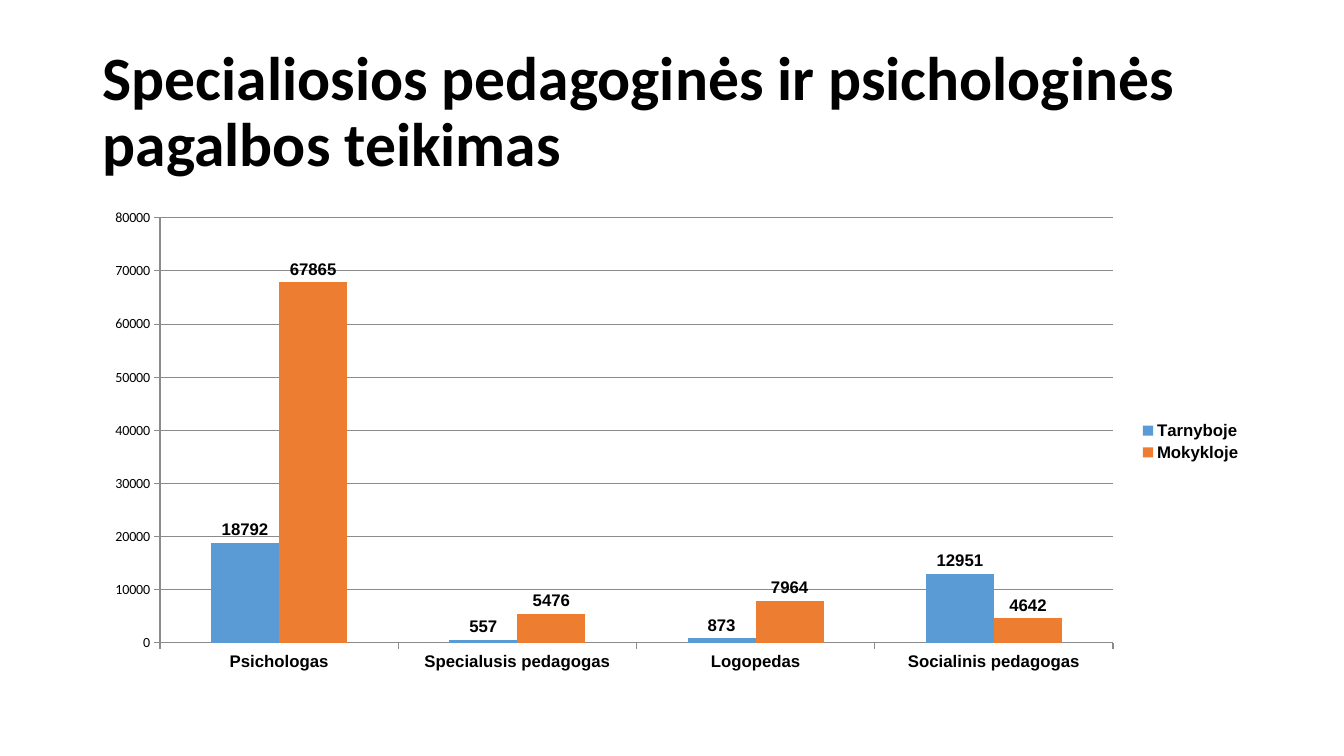
from dataclasses import dataclass

from lxml.etree import SubElement
from pptx import Presentation
from pptx.chart.data import CategoryChartData as ChartData
from pptx.dml.color import RGBColor as RGB
from pptx.enum.chart import XL_CHART_TYPE as Kind
from pptx.enum.chart import XL_LABEL_POSITION as LabelPos
from pptx.enum.chart import XL_LEGEND_POSITION as LegendPos
from pptx.enum.chart import XL_TICK_MARK as Tick
from pptx.enum.text import MSO_ANCHOR as Anchor
from pptx.enum.text import PP_ALIGN as Align
from pptx.oxml.ns import qn
from pptx.util import Inches, Pt


@dataclass(frozen=True)
class Theme:
    ink: RGB = RGB(0, 0, 0)
    grid: RGB = RGB(0x8B, 0x8B, 0x8B)
    blue: RGB = RGB(0x5B, 0x9B, 0xD5)
    orange: RGB = RGB(0xED, 0x7D, 0x31)
    main: str = "Calibri"
    label: str = "Arial"
    title_size: int = 44
    label_size: int = 12
    axis_size: int = 10


@dataclass(frozen=True)
class Box:
    left: float
    top: float
    width: float
    height: float

    def lengths(self) -> tuple:
        return tuple(map(Inches, (self.left, self.top, self.width, self.height)))


@dataclass(frozen=True)
class Group:
    name: str
    color: RGB
    counts: tuple[int, ...]


THEME = Theme()
TITLE = "Specialiosios pedagoginės ir psichologinės pagalbos teikimas"
TITLE_BOX = Box(0.92, 0.4, 11.5, 1.45)
CHART_BOX = Box(0.92, 2, 11.5, 4.76)
PLOT = {"x": 0.058, "y": 0.034, "w": 0.822, "h": 0.886}  # shares of the chart box
ROLES = ("Psichologas", "Specialusis pedagogas", "Logopedas", "Socialinis pedagogas")
GROUPS = (
    Group("Tarnyboje", THEME.blue, (18792, 557, 873, 12951)),
    Group("Mokykloje", THEME.orange, (67865, 5476, 7964, 4642)),
)


def set_font(font, name: str, size: int, bold: bool) -> None:
    font.name, font.size, font.bold = name, Pt(size), bold
    font.color.rgb = THEME.ink


def set_label(font) -> None:
    set_font(font, THEME.label, THEME.label_size, True)


def add_title(slide) -> None:
    title = slide.shapes.title
    title.left, title.top, title.width, title.height = TITLE_BOX.lengths()
    frame = title.text_frame
    frame.text = TITLE
    frame.word_wrap = True
    frame.vertical_anchor = Anchor.MIDDLE
    para = frame.paragraphs[0]
    para.alignment, para.line_spacing = Align.LEFT, 0.9
    set_font(para.runs[0].font, THEME.main, THEME.title_size, True)


def style_axis(axis) -> None:
    axis.major_tick_mark, axis.minor_tick_mark = Tick.OUTSIDE, Tick.NONE
    axis.format.line.color.rgb = THEME.grid
    axis.format.line.width = Pt(0.75)


def place_plot(chart) -> None:
    area = chart.plots[0]._element.getparent()
    layout = area.find(qn("c:layout"))
    if layout is None:
        layout = SubElement(area, qn("c:layout"))
        area.insert(0, layout)
    manual = SubElement(layout, qn("c:manualLayout"))
    parts = {"layoutTarget": "inner", "xMode": "edge", "yMode": "edge", **PLOT}
    for tag, value in parts.items():
        SubElement(manual, qn(f"c:{tag}")).set("val", str(value))


def add_chart(slide) -> None:
    data = ChartData(number_format="General")
    data.categories = ROLES
    for group in GROUPS:
        data.add_series(group.name, group.counts)
    chart = slide.shapes.add_chart(
        Kind.COLUMN_CLUSTERED, *CHART_BOX.lengths(), data
    ).chart
    chart.has_title = False
    set_font(chart.font, THEME.main, THEME.axis_size, False)

    # Axes and grid
    roles, scale = chart.category_axis, chart.value_axis
    for axis in (roles, scale):
        style_axis(axis)
    set_label(roles.tick_labels.font)
    scale.minimum_scale, scale.maximum_scale, scale.major_unit = 0, 80000, 10000
    scale.has_major_gridlines = True
    scale.major_gridlines.format.line.color.rgb = THEME.grid
    scale.major_gridlines.format.line.width = Pt(0.75)

    # Columns and labels
    plot = chart.plots[0]
    plot.gap_width, plot.overlap, plot.vary_by_categories = 150, 0, False
    for group, bars in zip(GROUPS, plot.series):
        bars.format.fill.solid()
        bars.format.fill.fore_color.rgb = group.color
        labels = bars.data_labels
        labels.show_value = True
        labels.position = LabelPos.OUTSIDE_END
        set_label(labels.font)

    # Legend
    chart.has_legend = True
    chart.legend.position = LegendPos.RIGHT
    chart.legend.include_in_layout = False
    set_label(chart.legend.font)
    place_plot(chart)


def main() -> None:
    deck = Presentation()
    deck.slide_width, deck.slide_height = Inches(13.33), Inches(7.5)
    slide = deck.slides.add_slide(deck.slide_layouts[5])
    add_title(slide)
    add_chart(slide)
    deck.save("out.pptx")


if __name__ == "__main__":
    main()
